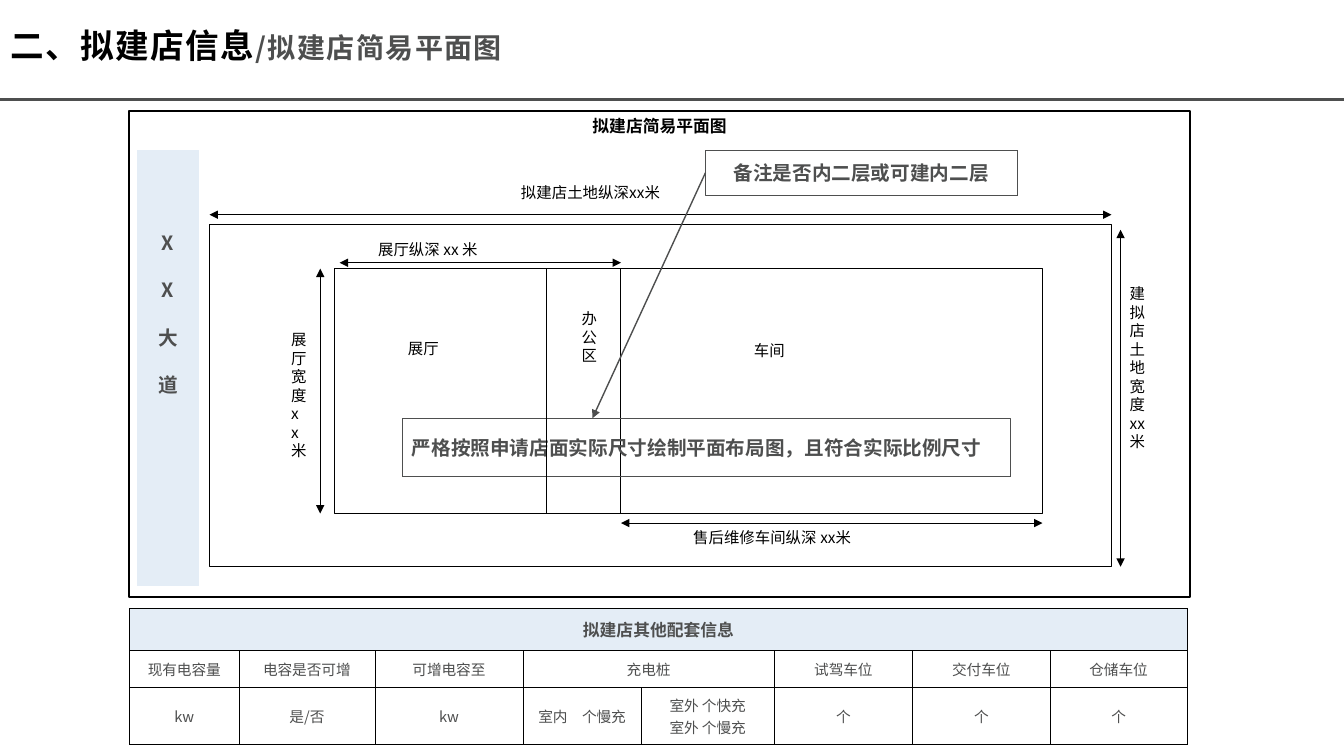
from lxml import etree
from pptx import Presentation
from pptx.dml.color import RGBColor
from pptx.enum.dml import MSO_LINE
from pptx.enum.shapes import MSO_CONNECTOR, MSO_SHAPE
from pptx.enum.text import MSO_ANCHOR, PP_ALIGN
from pptx.oxml import parse_xml
from pptx.oxml.ns import nsdecls, qn
from pptx.util import Cm, Pt

RECT = MSO_SHAPE.RECTANGLE
STRAIGHT = MSO_CONNECTOR.STRAIGHT
DOTTED = MSO_LINE.ROUND_DOT
TOP, MIDDLE = MSO_ANCHOR.TOP, MSO_ANCHOR.MIDDLE
LEFT, CENTER, JUSTIFY = PP_ALIGN.LEFT, PP_ALIGN.CENTER, PP_ALIGN.JUSTIFY
BLACK = RGBColor(0x00, 0x00, 0x00)
WHITE = RGBColor(0xFF, 0xFF, 0xFF)
GREY = RGBColor(0x4E, 0x4F, 0x4F)
PALE = RGBColor(0xE4, 0xED, 0xF6)
FONT = "Noto Sans CJK SC"

prs = Presentation()
prs.slide_width, prs.slide_height = Cm(33.87), Cm(19.05)
s = prs.slides.add_slide(prs.slide_layouts[6])


def add_run(p, text, size, color, bold=False):
    r = p.add_run()
    r.text = text
    fmt = {"name": FONT, "size": Pt(size), "bold": bold}
    for key, value in fmt.items():
        setattr(r.font, key, value)
    r.font.color.rgb = color
    etree.SubElement(r.font._element, qn("a:ea")).set("typeface", FONT)
    return r


def write(tf, lines, size, color, bold=False, align=CENTER, gap=0):
    tf.word_wrap = True
    for i, line in enumerate(lines):
        p = tf.paragraphs[0] if i == 0 else tf.add_paragraph()
        fmt = {"alignment": align, "space_before": Pt(gap if i else 0)}
        for key, value in fmt.items():
            setattr(p, key, value)
        add_run(p, line, size, color, bold)


# Slide title
title = s.shapes.add_textbox(Cm(0.02), Cm(0.5), Cm(24.49), Cm(1.4))
tf = title.text_frame
tf.word_wrap = True
tf.vertical_anchor = MIDDLE
p = tf.paragraphs[0]
p.line_spacing = 0.9
for text, size, color in [("二、拟建店信息", 24, BLACK), ("/拟建店简易平面图", 20, GREY)]:
    r = add_run(p, text, size, color, True)
    r.font._element.set("spc", "100")

# Plan outlines: left, top, width, height, fill, line, line width, key
outlines = [
    (3.25, 2.79, 26.75, 12.26, WHITE, BLACK, 1.5, "frame"),
    (5.28, 5.65, 22.73, 8.63, WHITE, BLACK, 0.75, "land"),
    (3.46, 3.79, 1.55, 10.97, PALE, PALE, 0.75, "road"),
    (8.43, 6.77, 7.92, 6.17, WHITE, BLACK, 0.75, "showroom"),
    (15.65, 6.77, 10.62, 6.17, WHITE, BLACK, 0.75, "workshop"),
    (17.78, 3.78, 7.85, 1.14, None, GREY, 0.25, "floors"),
    (10.13, 10.54, 15.32, 1.47, None, GREY, 0.25, "scale"),
]
frames = {}
for x, y, w, h, fill, line, width, key in outlines:
    sp = s.shapes.add_shape(RECT, Cm(x), Cm(y), Cm(w), Cm(h))
    sp.shadow.inherit = False
    sp.line.color.rgb = line
    sp.line.width = Pt(width)
    if fill is None:
        sp.fill.background()
        sp.line.dash_style = DOTTED
    else:
        sp.fill.solid()
        sp.fill.fore_color.rgb = fill
        sp.text_frame.vertical_anchor = TOP
    frames[key] = sp.text_frame

write(frames["frame"], ["拟建店简易平面图"], 12, BLACK, True)
frames["road"].margin_top = Cm(2.04)
write(frames["road"], "XX大道", 14, GREY, True, gap=16.8)
write(frames["floors"], ["备注是否内二层或可建内二层"], 14, GREY, True)
write(frames["scale"], ["严格按照申请店面实际尺寸绘制平面布局图，且符合实际比例尺寸"],
      14, GREY, True, LEFT)

# Room names and dimension labels: left, top, width, height, lines
labels = [
    (12.88, 4.5, 7.32, 0.76, ["拟建店土地纵深xx米"]),
    (28.22, 7.04, 0.97, 6.58, ["建拟店土地宽度xx", "米"]),
    (7.09, 8.2, 0.8, 5.84, ["展厅宽度xx米"]),
    (9.28, 5.92, 5.59, 0.64, ["展厅纵深 xx 米"]),
    (17.22, 13.18, 8.31, 0.53, ["售后维修车间纵深 xx米"]),
    (14.41, 7.67, 0.97, 2.49, ["办", "公", "区"]),
    (10.03, 8.41, 1.4, 2.24, ["展厅"]),
    (18.75, 8.47, 5.89, 2.12, ["车间"]),
]
for x, y, w, h, lines in labels:
    sp = s.shapes.add_textbox(Cm(x), Cm(y), Cm(w), Cm(h))
    write(sp.text_frame, lines, 11, BLACK, align=JUSTIFY)

# Rules, dimension arrows and pointer: start, end, colour, width, arrowheads
BOTH = ("headEnd", "tailEnd")
connectors = [
    (0, 2.51, 33.86, 2.51, GREY, 1.9, ()),
    (13.78, 6.77, 13.78, 12.94, BLACK, 0.75, ()),
    (5.28, 5.41, 28.01, 5.41, BLACK, 0.75, BOTH),
    (28.24, 5.79, 28.24, 14.28, BLACK, 0.75, BOTH),
    (8.07, 6.77, 8.07, 12.94, BLACK, 0.75, BOTH),
    (8.56, 6.62, 15.65, 6.62, BLACK, 0.75, BOTH),
    (15.65, 13.18, 26.27, 13.18, BLACK, 0.75, BOTH),
    (17.78, 4.35, 14.93, 10.54, GREY, 1, ("tailEnd",)),
]
for x1, y1, x2, y2, color, width, ends in connectors:
    cxn = s.shapes.add_connector(STRAIGHT, Cm(x1), Cm(y1), Cm(x2), Cm(y2))
    cxn.line.color.rgb = color
    cxn.line.width = Pt(width)
    for end in ends:
        etree.SubElement(cxn.line._get_or_add_ln(), qn(f"a:{end}")).set("type", "triangle")
    etree.SubElement(cxn._element.spPr, qn("a:effectLst"))

# Facilities table
col_widths = [2.75, 3.43, 3.73, 2.98, 3.35, 3.49, 3.46, 3.46]
row_heights = [1.06, 0.94, 1.43]
rows = [
    ["拟建店其他配套信息"] + [""] * 7,
    ["现有电容量", "电容是否可增", "可增电容至", "充电桩", "", "试驾车位", "交付车位", "仓储车位"],
    ["kw", "是/否", "kw", "室内　个慢充", "室外 个快充\n室外 个慢充", "个", "个", "个"],
]
frame = s.shapes.add_table(len(rows), len(col_widths), Cm(3.27), Cm(15.33),
                           Cm(sum(col_widths)), Cm(sum(row_heights)))
table = frame.table
table.first_row = table.horz_banding = False
for col, width in zip(table.columns, col_widths):
    col.width = Cm(width)
for row, height in zip(table.rows, row_heights):
    row.height = Cm(height)
table.cell(0, 0).merge(table.cell(0, 7))
table.cell(1, 3).merge(table.cell(1, 4))

for i, texts in enumerate(rows):
    for j, text in enumerate(texts):
        cell = table.cell(i, j)
        for side in "LRTB":
            cell._tc.get_or_add_tcPr().append(parse_xml(
                f'<a:ln{side} {nsdecls("a")} w="6350"><a:solidFill>'
                f'<a:srgbClr val="{BLACK}"/></a:solidFill></a:ln{side}>'))
        if i == 0:
            cell.fill.solid()
            cell.fill.fore_color.rgb = PALE
        else:
            cell.fill.background()
        cell.vertical_anchor = MIDDLE
        if text:
            write(cell.text_frame, text.split("\n"), 10.5 if i else 12, GREY, i == 0)

prs.save("out.pptx")
